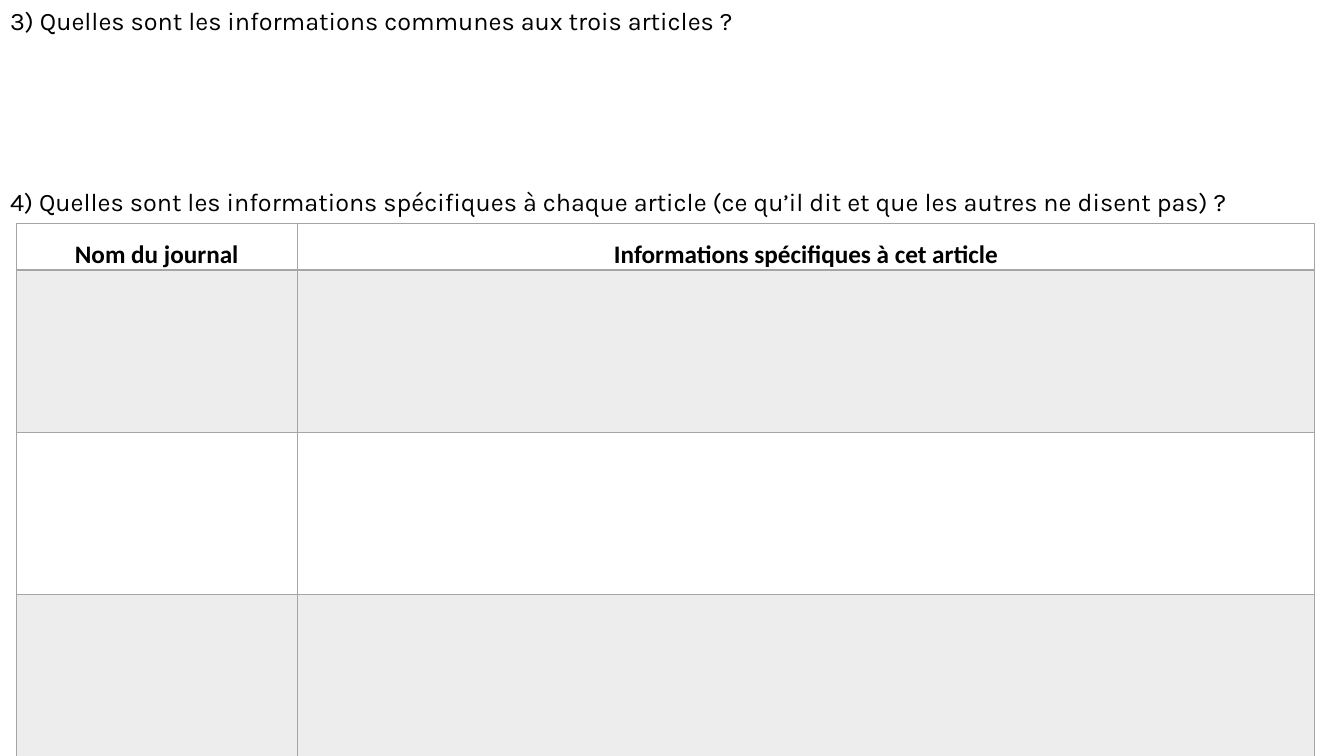
from lxml.etree import SubElement
from pptx import Presentation
from pptx.dml.color import RGBColor
from pptx.enum.text import MSO_ANCHOR, MSO_AUTO_SIZE, PP_ALIGN
from pptx.oxml.ns import qn
from pptx.util import Inches, Pt

BLACK = RGBColor(0x00, 0x00, 0x00)
BORDER_GREY = RGBColor(0xA5, 0xA5, 0xA5)
BAND_GREY = RGBColor(0xED, 0xED, 0xED)

COLUMN_WIDTHS = [2.79, 10.09]
ROW_HEIGHTS = [0.45, 1.61, 1.61, 1.61]
HEADERS = ["Nom du journal", "Informations spécifiques à cet article"]


def add_text(paragraph, text, font_name, bold):
    run = paragraph.add_run()
    run.text = text
    run.font.name = font_name
    run.font.size = Pt(18)
    run.font.bold = bold
    run.font.color.rgb = BLACK


def set_borders(cell, widths):
    properties = cell._tc.get_or_add_tcPr()
    for side, width in widths.items():
        line = SubElement(properties, qn(f"a:ln{side}"), w=str(Pt(width)))
        fill = SubElement(line, qn("a:solidFill"))
        SubElement(fill, qn("a:srgbClr"), val=str(BORDER_GREY))


presentation = Presentation()
presentation.slide_width = Inches(13.33)
presentation.slide_height = Inches(7.5)
slide = presentation.slides.add_slide(presentation.slide_layouts[1])

# Questions
questions = [
    (slide.shapes.title, 0, "3) Quelles sont les informations communes aux trois articles\u00a0?"),
    (slide.placeholders[1], 1.8,
     "4) Quelles sont les informations spécifiques à chaque article "
     "(ce qu’il dit et que les autres ne disent pas)\u00a0?"),
]
for shape, top, question in questions:
    shape.left, shape.top = 0, Inches(top)
    shape.width, shape.height = presentation.slide_width, Inches(0.42)
    frame = shape.text_frame
    frame.word_wrap = True
    frame.auto_size = MSO_AUTO_SIZE.NONE
    frame.vertical_anchor = MSO_ANCHOR.TOP
    paragraph = frame.paragraphs[0]
    paragraph.alignment = PP_ALIGN.LEFT
    paragraph.space_before = Pt(0)
    paragraph_properties = paragraph._p.get_or_add_pPr()
    paragraph_properties.set("marL", "0")
    paragraph_properties.set("indent", "0")
    SubElement(paragraph_properties, qn("a:buNone"))
    add_text(paragraph, question, "Karla", False)

# Answer table
table = slide.shapes.add_table(
    len(ROW_HEIGHTS), len(COLUMN_WIDTHS), Inches(0.16), Inches(2.22),
    Inches(sum(COLUMN_WIDTHS)), Inches(sum(ROW_HEIGHTS))).table
table.horz_banding = False
for column, width in zip(table.columns, COLUMN_WIDTHS):
    column.width = Inches(width)

for row_index, (row, height) in enumerate(zip(table.rows, ROW_HEIGHTS)):
    row.height = Inches(height)
    for cell in row.cells:
        set_borders(cell, {"L": 1, "R": 1,
                           "T": 2 if row_index == 1 else 1,
                           "B": 2 if row_index == 0 else 1})
        cell.margin_left = cell.margin_right = Inches(0.07)
        cell.margin_top = cell.margin_bottom = 0
        if row_index % 2:
            cell.fill.solid()
            cell.fill.fore_color.rgb = BAND_GREY
        else:
            cell.fill.background()

# Header row
for cell, header in zip(table.rows[0].cells, HEADERS):
    paragraph = cell.text_frame.paragraphs[0]
    paragraph.alignment = PP_ALIGN.CENTER
    paragraph.line_spacing = 1.5
    paragraph.space_before = paragraph.space_after = Pt(6)
    add_text(paragraph, header, "Calibri", True)

presentation.save("out.pptx")
